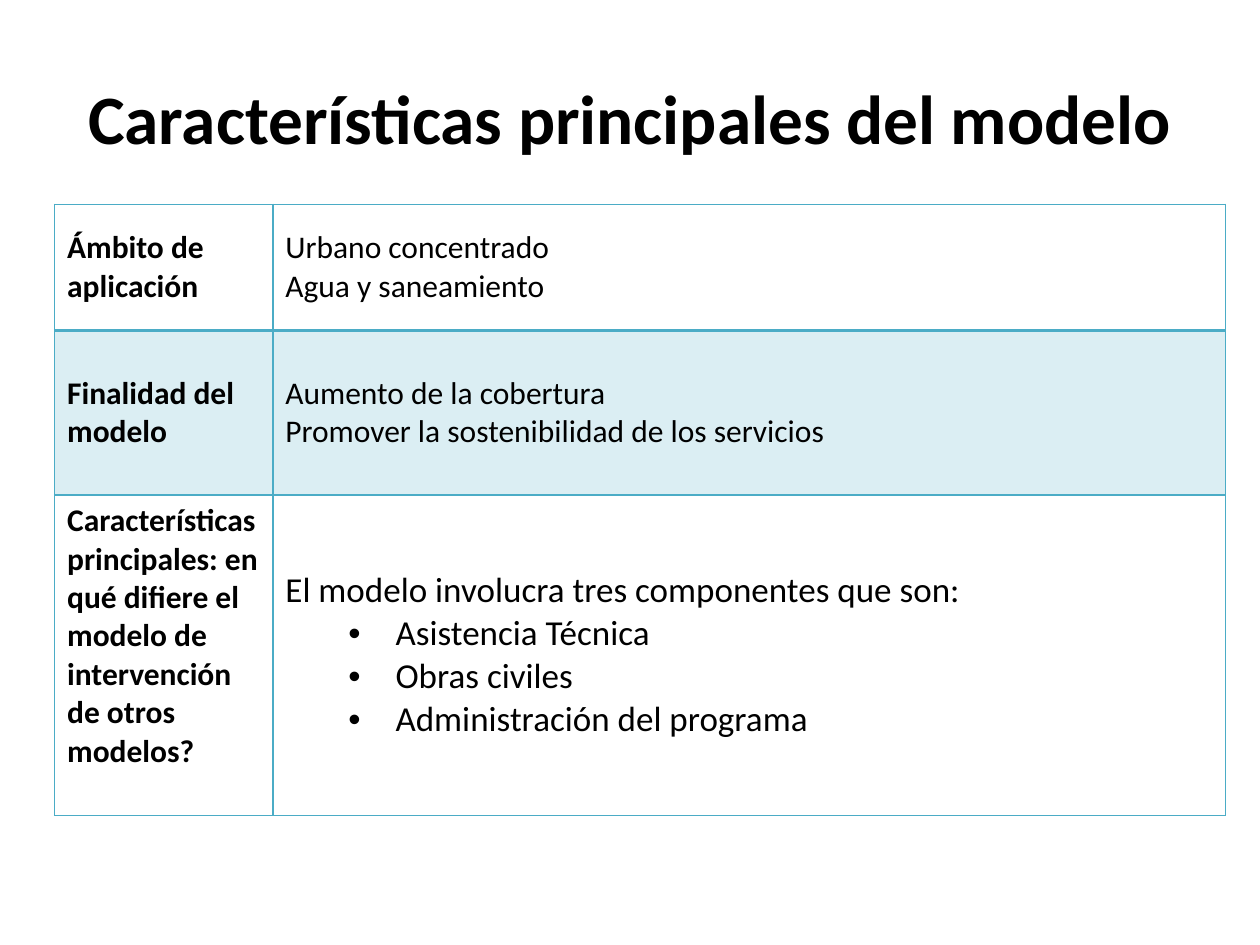
from dataclasses import dataclass

from lxml import etree
from pptx import Presentation
from pptx.dml import color
from pptx.enum import text
from pptx.oxml import ns
from pptx.util import Cm, Pt

FONT = "Calibri"
BLACK = "000000"
TEAL = "4BACC6"


@dataclass
class Row:
    heading: str
    lines: list[str]
    height: float
    size: float = 18
    bullets: tuple[str, ...] = ()
    tinted: bool = False
    top_width: float = 1
    bottom_width: float = 1
    heading_bottom: float = 0.13


ROWS = [
    Row("Ámbito de aplicación", ["Urbano concentrado", "Agua y saneamiento"], 2.54, bottom_width=2),
    Row(
        "Finalidad del modelo",
        ["Aumento de la cobertura", "Promover la sostenibilidad de los servicios"],
        3.32,
        tinted=True,
        top_width=2,
    ),
    Row(
        "Características principales: en qué difiere el modelo de intervención de otros modelos?",
        ["El modelo involucra tres componentes que son:"],
        6.46,
        size=20,
        bullets=("Asistencia Técnica", "Obras civiles", "Administración del programa"),
        heading_bottom=0.9,
    ),
]
COLUMN_WIDTHS = (4.4, 19.2)


def rgb(value: str) -> color.RGBColor:
    return color.RGBColor.from_string(value)


def add_child(parent, tag: str, **attributes: str):
    return etree.SubElement(parent, ns.qn(tag), attributes)


def write(frame, lines, *, size: float, bold: bool = False,
          align=text.PP_ALIGN.LEFT, bullets=()) -> None:
    frame.word_wrap = True
    entries = [(line, False) for line in lines] + [(line, True) for line in bullets]
    for index, (line, bulleted) in enumerate(entries):
        para = frame.add_paragraph() if index else frame.paragraphs[0]
        para.alignment = align
        span = para.add_run()
        span.text = line
        span.font.name = FONT
        span.font.size = Pt(size)
        span.font.bold = bold
        span.font.color.rgb = rgb(BLACK)
        if bulleted:
            para.level = 1
            properties = para._p.get_or_add_pPr()
            properties.set("marL", str(Cm(2.22)))
            properties.set("indent", str(Cm(-0.95)))
            add_child(properties, "a:buFont", typeface="Arial")
            add_child(properties, "a:buChar", char="•")


def style_cell(cell, row: Row) -> None:
    cell.vertical_anchor = text.MSO_ANCHOR.MIDDLE
    properties = cell._tc.get_or_add_tcPr()
    widths = {"L": 1, "R": 1, "T": row.top_width, "B": row.bottom_width}
    for side, width in widths.items():
        line = add_child(properties, f"a:ln{side}", w=str(Pt(width)))
        add_child(add_child(line, "a:solidFill"), "a:srgbClr", val=TEAL)
    if row.tinted:
        cell.fill.solid()
        cell.fill.fore_color.rgb = rgb(TEAL)
        tint = properties.find(ns.qn("a:solidFill")).find(ns.qn("a:srgbClr"))
        add_child(tint, "a:alpha", val="20000")
    else:
        cell.fill.background()


def add_title(page, title: str) -> None:
    box = page.shapes.add_textbox(Cm(1.27), Cm(0.76), Cm(22.86), Cm(3.18))
    box.text_frame.vertical_anchor = text.MSO_ANCHOR.MIDDLE
    write(box.text_frame, [title], size=39.6, bold=True, align=text.PP_ALIGN.CENTER)


def add_features(page, rows: list[Row]) -> None:
    height = sum(row.height for row in rows)
    table = page.shapes.add_table(
        len(rows), len(COLUMN_WIDTHS), Cm(1.1), Cm(4.12), Cm(sum(COLUMN_WIDTHS)), Cm(height)
    ).table
    table.first_row = False
    table.horz_banding = False
    for column, width in zip(table.columns, COLUMN_WIDTHS):
        column.width = Cm(width)
    for index, row in enumerate(rows):
        table.rows[index].height = Cm(row.height)
        heading, detail = table.cell(index, 0), table.cell(index, 1)
        write(heading.text_frame, [row.heading], size=18, bold=True)
        write(detail.text_frame, row.lines, size=row.size,
              align=text.PP_ALIGN.JUSTIFY, bullets=row.bullets)
        heading.margin_bottom = Cm(row.heading_bottom)
        for cell in (heading, detail):
            style_cell(cell, row)


def main() -> None:
    deck = Presentation()
    deck.slide_width, deck.slide_height = Cm(25.4), Cm(19.05)
    page = deck.slides.add_slide(deck.slide_layouts[6])
    add_title(page, "Características principales del modelo")
    add_features(page, ROWS)
    deck.save("out.pptx")


if __name__ == "__main__":
    main()
